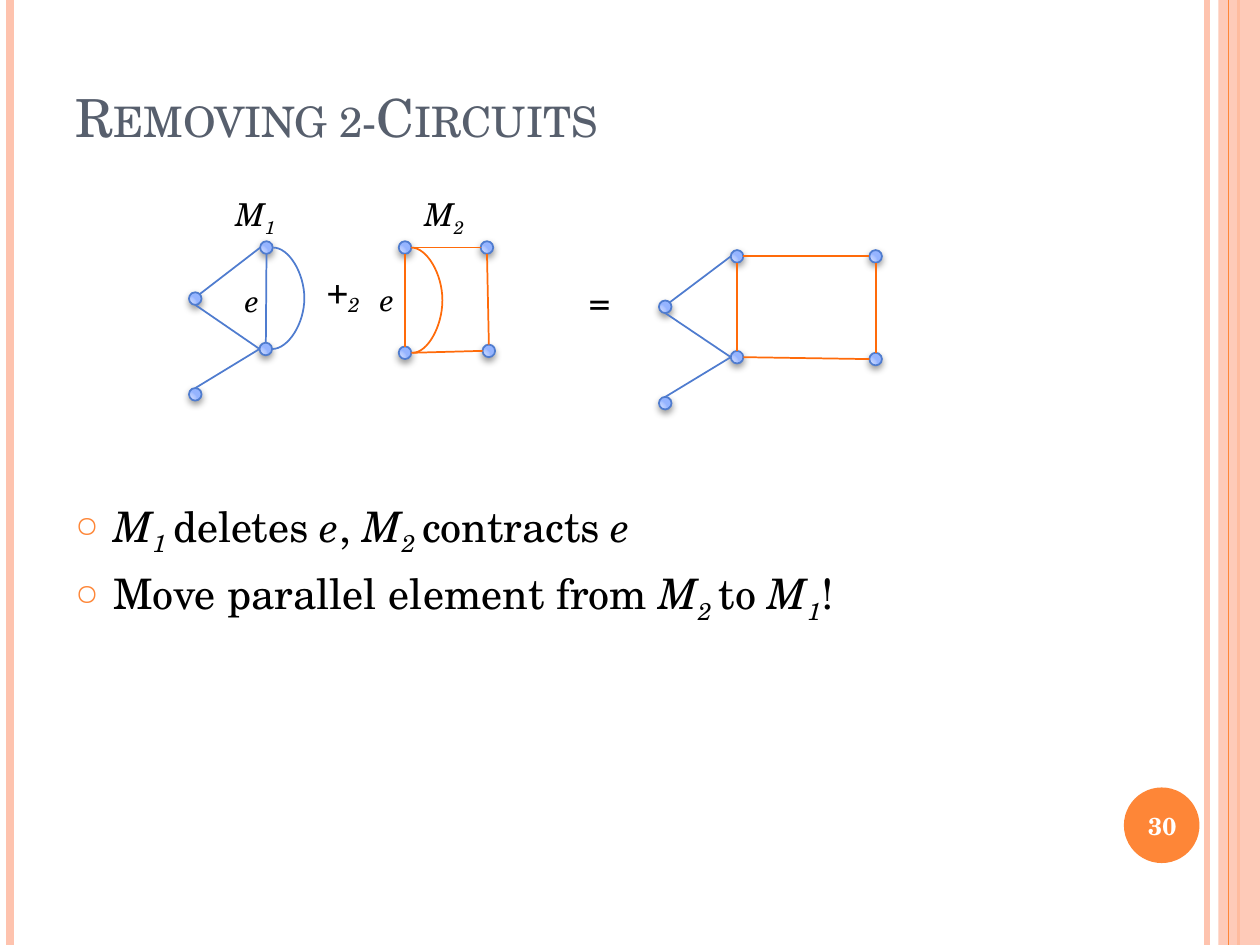
from lxml import etree
from pptx import Presentation
from pptx.dml.color import RGBColor
from pptx.enum.shapes import MSO_CONNECTOR as Line, MSO_SHAPE as Shape
from pptx.enum.text import MSO_ANCHOR as Anchor, PP_ALIGN as Align
from pptx.oxml import parse_xml
from pptx.oxml.ns import nsdecls, qn
from pptx.util import Inches, Pt

FONT = "TeX Gyre Schola"
COLORS = {
    "pink": "FEC3AE", "orange": "FE8637", "slate": "575F6D", "black": "000000",
    "white": "FFFFFF", "blue": "4F7CCF", "red": "FF6B0A",
}
NODE_FILL = {0: "CFDCFF", 30: "CBD9FF", 75: "AFC6FF", 100: "95B4FF"}
CELL = Inches(0.1)  # the slide is a grid of 100 columns by 75 rows
COLUMNS, ROWS = 100, 75

deck = Presentation()
deck.slide_width, deck.slide_height = COLUMNS * CELL, ROWS * CELL
page = deck.slides.add_slide(deck.slide_layouts[6])


def add_line(start, end, color, width=1, kind=Line.STRAIGHT):
    """Draw a line without shadow between two (column, row) points."""
    line = page.shapes.add_connector(kind, *[round(v * CELL) for v in (*start, *end)])
    line.line.color.rgb = RGBColor.from_string(COLORS[color])
    line.line.width = Pt(width)
    etree.SubElement(line._element.spPr, qn("a:effectLst"))
    return line


def add_text(place, paragraphs, size, color="black", wrap=True):
    """Add a text box; each span is (text, style), style "i" italic, "s" subscript."""
    box = page.shapes.add_textbox(*[round(v * CELL) for v in place])
    frame = box.text_frame
    frame.word_wrap = wrap
    for number, spans in enumerate(paragraphs):
        para = frame.paragraphs[0] if number == 0 else frame.add_paragraph()
        for text, style in spans:
            span = para.add_run()
            span.text = text
            span.font.name, span.font.size = FONT, Pt(size)
            span.font.italic = style in ("i", "s")
            span.font.color.rgb = RGBColor.from_string(COLORS[color])
            if style == "s":
                span.font._element.set("baseline", "-25000")
    return frame


# Side stripes and the page number disc
for column, color, width in [(95.8, "pink", 3), (0.8, "pink", 4.5), (98.3, "orange", 1.5)]:
    add_line((column, 0), (column, ROWS), color, width)

for kind, place, color, alpha in [
    (Shape.RECTANGLE, (96.7, 0, 3.3, ROWS), "pink", 87),
    (Shape.OVAL, (89.2, 62.5, 6, 6), "orange", 100),
]:
    panel = page.shapes.add_shape(kind, *[round(v * CELL) for v in place])
    panel.shadow.inherit = False
    panel.fill.solid()
    panel.fill.fore_color.rgb = RGBColor.from_string(COLORS[color])
    panel.line.fill.background()
    if alpha < 100:
        tint = panel._element.spPr.find(".//" + qn("a:srgbClr"))
        etree.SubElement(tint, qn("a:alpha")).set("val", str(alpha * 1000))
add_line((97.5, 0), (97.5, ROWS), "orange", 0.75)

title = add_text((5, 3, 81.7, 12.5), [[("Removing 2-Circuits", "")]], 30, "slate")
title.vertical_anchor = Anchor.MIDDLE
title.paragraphs[0].runs[0].font._element.set("cap", "small")

number = add_text((88.9, 62.7, 6.7, 5.7), [[("30", "")]], 14, "white")
number.vertical_anchor = Anchor.MIDDLE
number.paragraphs[0].alignment = Align.CENTER
number.paragraphs[0].runs[0].font.bold = True

# Graph nodes by centre: M1, M2 and their 2-sum
nodes = {
    "left1": (15.5, 23.7), "low1": (21.1, 27.7), "top1": (21.15, 19.65), "tail1": (15.5, 31.3),
    "nw2": (32.15, 19.65), "sw2": (32.15, 28), "ne2": (38.65, 19.65), "se2": (38.8, 27.85),
    "left": (52.8, 24.35), "low": (58.5, 28.35), "top": (58.5, 20.35), "tail": (52.8, 32),
    "ne": (69.5, 20.35), "se": (69.5, 28.5),
}
RADIUS = 0.5
stops = "".join(
    f'<a:gs pos="{share * 1000}"><a:srgbClr val="{color}"/></a:gs>'
    for share, color in NODE_FILL.items()
)
GRADIENT = (
    f'<a:gradFill {nsdecls("a")} rotWithShape="1"><a:gsLst>{stops}</a:gsLst><a:path path="circle">'
    '<a:fillToRect l="5000" t="100000" r="120000" b="10000"/></a:path></a:gradFill>'
)
SHADOW = (
    f'<a:effectLst {nsdecls("a")}><a:outerShdw blurRad="{Pt(4)}" dist="{Pt(2)}" dir="5400000" '
    'rotWithShape="0"><a:srgbClr val="000000"><a:alpha val="40000"/></a:srgbClr>'
    '</a:outerShdw></a:effectLst>'
)
for x, y in nodes.values():
    corner = round((x - RADIUS) * CELL), round((y - RADIUS) * CELL)
    node = page.shapes.add_shape(Shape.OVAL, *corner, CELL, CELL)
    node.line.color.rgb = RGBColor.from_string(COLORS["blue"])
    node.line.width = Pt(1)
    node._element.spPr.find(qn("a:prstGeom")).addnext(parse_xml(GRADIENT))
    node._element.spPr.append(parse_xml(SHADOW))

# Edges join a side of one node to a side of another
SIDES = {"n": (0, -1), "s": (0, 1), "w": (-1, 0), "e": (1, 0), "ne": (0.7, -0.7)}
edges = [
    ("top1", "s", "low1", "n", "blue"),
    ("nw2", "s", "sw2", "n", "red"), ("ne2", "w", "nw2", "e", "red"),
    ("se2", "w", "sw2", "e", "red"), ("se2", "n", "ne2", "s", "red"),
    ("top", "s", "low", "n", "red"), ("ne", "w", "top", "e", "red"),
    ("se", "w", "low", "e", "red"), ("se", "n", "ne", "s", "red"),
]
for suffix in ("1", ""):
    left, top, low, tail = (name + suffix for name in ("left", "top", "low", "tail"))
    edges += [
        (left, "ne", top, "w", "blue"), (left, "s", low, "w", "blue"),
        (low, "w", tail, "n", "blue"),
    ]
for first, side, second, other, color in edges:
    ends = [
        [centre + RADIUS * step for centre, step in zip(nodes[name], SIDES[way])]
        for name, way in ((first, side), (second, other))
    ]
    add_line(*ends, color)

# Parallel edges bulge right by a multiple of the tiny connector width
BULGE, WIDTH = 2.5, 0.1
for x, top, bottom, step, color in [
    (21.7, 19.65, 27.7, -WIDTH, "blue"),
    (32.65, 19.65, 28, WIDTH, "red"),
]:
    curve = add_line((x, top), (x + step, bottom), color, kind=Line.CURVE)
    guides = curve._element.spPr.find(qn("a:prstGeom")).get_or_add_avLst()
    guide = etree.SubElement(guides, qn("a:gd"))
    guide.set("name", "adj1")
    guide.set("fmla", f"val {round(BULGE / step * 100000)}")

for place, spans, size in [
    ((17.7, 15, 5.6, 4), [("M", "i"), ("1", "s")], 18),
    ((32.7, 15, 5.6, 4), [("M", "i"), ("2", "s")], 18),
    ((25, 20.8, 5.3, 4.4), [("+", "i"), ("2", "s")], 20),
    ((45.8, 21.7, 4.3, 4.4), [("=", "i")], 20),
    ((18.5, 21.8, 4, 4), [("e", "i")], 18),
    ((29.2, 21.7, 4, 4), [("e", "i")], 18),
]:
    add_text(place, [spans], size, wrap=False)

body = add_text((5, 39.2, 83.9, 20), [
    [("M", "i"), ("1 ", "s"), ("deletes ", ""), ("e", "i"), (", ", ""),
     ("M", "i"), ("2 ", "s"), ("contracts ", ""), ("e", "i")],
    [("Move parallel element from ", ""), ("M", "i"), ("2 ", "s"), ("to ", ""),
     ("M", "i"), ("1", "s"), ("!", "")],
], 24)
for para in body.paragraphs:
    para.space_before = Pt(6)
    settings = para._element.get_or_add_pPr()
    settings.set("marL", str(3 * CELL))
    settings.set("indent", str(-3 * CELL))
    tint = etree.SubElement(etree.SubElement(settings, qn("a:buClr")), qn("a:srgbClr"))
    tint.set("val", COLORS["orange"])
    etree.SubElement(settings, qn("a:buSzPct")).set("val", "70000")
    etree.SubElement(settings, qn("a:buChar")).set("char", "○")

deck.save("out.pptx")
